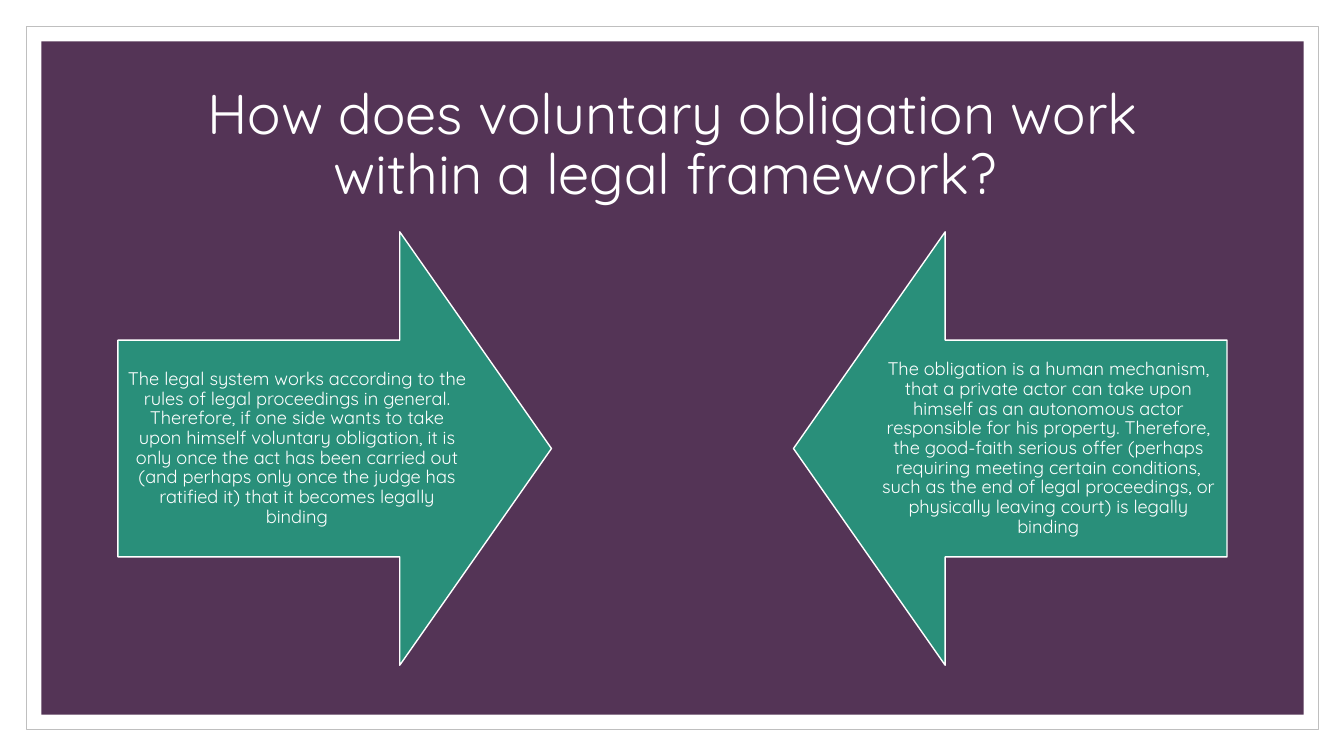
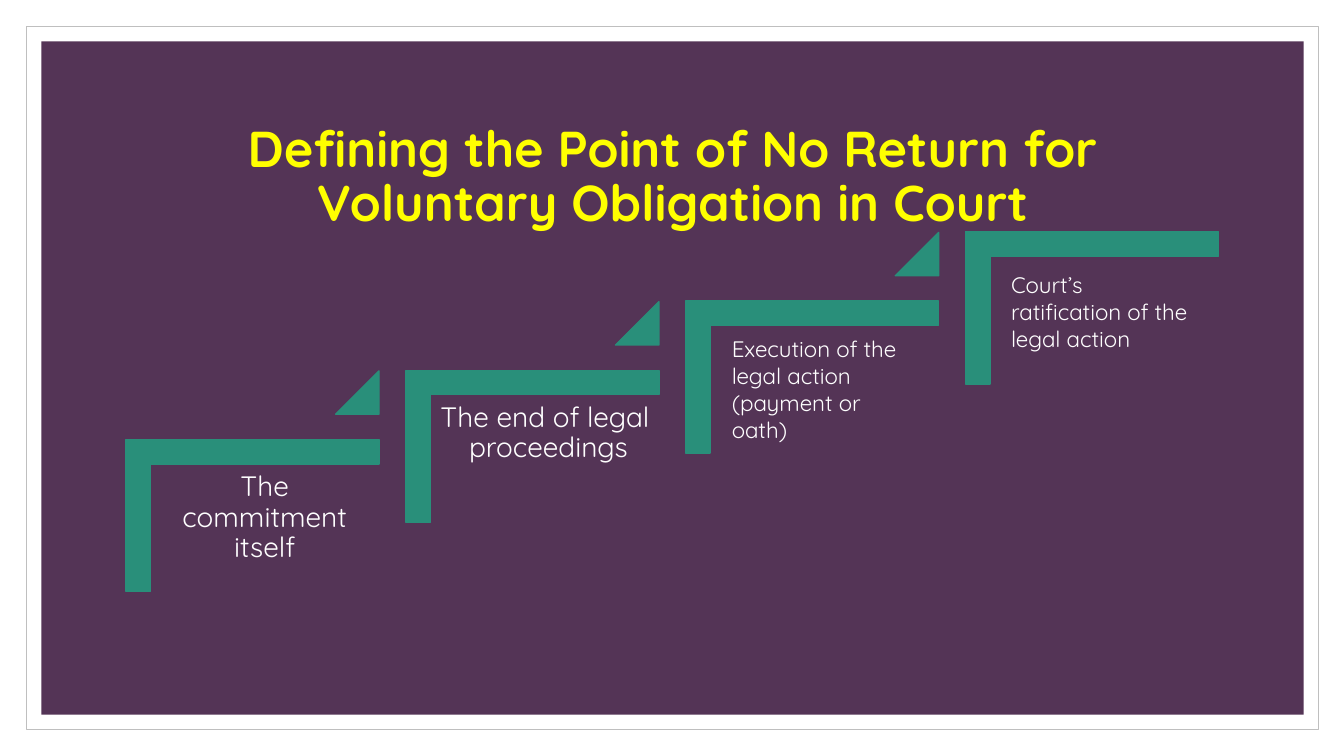
import pptx
import pptx.util
import pptx.dml.color
import pptx.enum.shapes
import pptx.enum.text

Inches = pptx.util.Inches
Pt = pptx.util.Pt
RGBColor = pptx.dml.color.RGBColor
SHAPE = pptx.enum.shapes.MSO_SHAPE
ALIGN = pptx.enum.text.PP_ALIGN
ANCHOR = pptx.enum.text.MSO_ANCHOR

WHITE = RGBColor(0xFF, 0xFF, 0xFF)
GRAY = RGBColor(0xBF, 0xBF, 0xBF)
PURPLE = RGBColor(0x54, 0x34, 0x56)
GREEN = RGBColor(0x29, 0x8F, 0x7A)
YELLOW = RGBColor(0xFF, 0xFF, 0x00)
FONT = "Quicksand"


def add_shape(s, kind, x, y, w, h, fill, line=None, line_width=1, adj=()):
    sp = s.shapes.add_shape(kind, Inches(x), Inches(y), Inches(w), Inches(h))
    sp.shadow.inherit = False
    sp.fill.solid()
    sp.fill.fore_color.rgb = fill
    if line is None:
        sp.line.fill.background()
    else:
        sp.line.color.rgb = line
        sp.line.width = Pt(line_width)
    for i, value in enumerate(adj):
        sp.adjustments[i] = value
    return sp


def set_text(sp, text, size, color=WHITE, bold=False, centered=True, rtl=True,
             anchor=ANCHOR.MIDDLE, inset=None):
    tf = sp.text_frame
    tf.word_wrap = True
    tf.vertical_anchor = anchor
    if inset is not None:
        tf.margin_left = tf.margin_right = Inches(inset)
        tf.margin_top = tf.margin_bottom = Inches(inset)
    tf.text = text
    p = tf.paragraphs[0]
    p.alignment = ALIGN.CENTER if centered else ALIGN.LEFT
    if centered:
        p.line_spacing = 0.9
    if rtl:
        p._p.get_or_add_pPr().set("rtl", "1")
    font = p.runs[0].font
    font.name = FONT
    font.size = Pt(size)
    font.bold = bold
    font.color.rgb = color


prs = pptx.Presentation()
prs.slide_width = Inches(13.33)
prs.slide_height = Inches(7.5)

# Frame and title of each slide: text, height, size, colour, bold, right-to-left
titles = [
    ("How does voluntary obligation work within a legal framework? ",
     1.5, 40, WHITE, False, False),
    ("Defining the Point of No Return for Voluntary Obligation in Court",
     2.14, 36, YELLOW, True, True),
]
slides = []
for text, height, size, color, bold, rtl in titles:
    s = prs.slides.add_slide(prs.slide_layouts[6])
    add_shape(s, SHAPE.RECTANGLE, 0.26, 0.26, 12.82, 6.98, WHITE, GRAY, 0.5)
    add_shape(s, SHAPE.RECTANGLE, 0.41, 0.41, 12.52, 6.68, PURPLE)
    title = s.shapes.add_textbox(Inches(1.17), Inches(0.7), Inches(11), Inches(height))
    set_text(title, text, size, color, bold, rtl=rtl)
    slides.append(s)

# Slide 1: two facing arrows
arrows = [
    (SHAPE.RIGHT_ARROW, 1.17,
     "The legal system works according to the rules of legal proceedings in general. "
     "Therefore, if one side wants to take upon himself voluntary obligation, it is only "
     "once the act has been carried out (and perhaps only once the judge has ratified it) "
     "that it becomes legally binding"),
    (SHAPE.LEFT_ARROW, 7.87,
     "The obligation is a human mechanism, that a private actor can take upon himself as "
     "an autonomous actor responsible for his property. Therefore, the good-faith serious "
     "offer (perhaps requiring meeting certain conditions, such as the end of legal "
     "proceedings, or physically leaving court) is legally binding"),
]
for kind, x, text in arrows:
    sp = add_shape(slides[0], kind, x, 2.3, 4.3, 4.3, GREEN, WHITE, adj=(0.5, 0.35))
    set_text(sp, text, 13, inset=0.1)

# Slide 2: rising steps, a triangle between each step and the next
s = slides[1]
STEP_X, STEP_Y = 2.775, 0.687
steps = 4
for i in range(steps):
    dx, dy = i * STEP_X, i * STEP_Y
    corner = add_shape(s, SHAPE.CORNER, 1.75 + dx, 3.86 - dy, 1.51, 2.51,
                       GREEN, GREEN, adj=(0.161, 0.161))
    corner.rotation = 90
    if i < steps - 1:
        add_shape(s, SHAPE.ISOSCELES_TRIANGLE, 3.33 + dx, 3.68 - dy, 0.43, 0.43,
                  GREEN, GREEN, adj=(1,))

# Step labels: text, left, top, width, height, size, centred
labels = [
    ("The commitment itself", 1.49, 4.61, 2.27, 1.99, 20, True),
    ("The end of legal proceedings ", 4.27, 3.92, 2.27, 1.99, 20, True),
    ("Execution of the legal action (payment or oath)", 7.16, 3.28, 2.06, 1.18, 16, False),
    ("Court’s ratification of the legal action", 9.93, 2.64, 2.06, 0.91, 16, False),
]
for text, x, y, w, h, size, centered in labels:
    label = s.shapes.add_textbox(Inches(x), Inches(y), Inches(w), Inches(h))
    set_text(label, text, size, centered=centered, rtl=centered, anchor=ANCHOR.TOP,
             inset=0.08 if centered else None)

prs.save("out.pptx")
